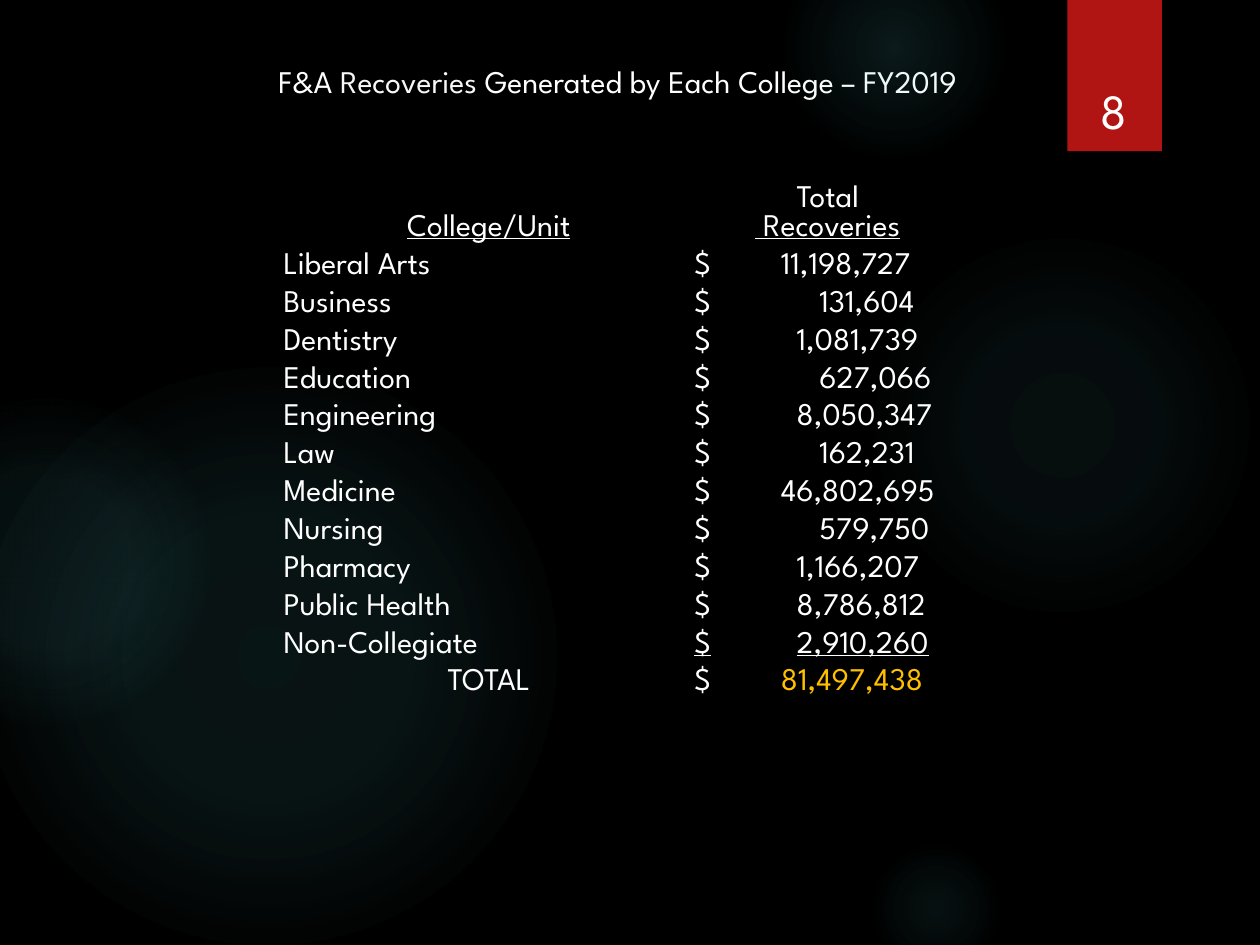
import pptx
import pptx.util
import pptx.oxml
import pptx.oxml.ns
import pptx.dml.color
from dataclasses import dataclass
from pptx.enum.shapes import MSO_SHAPE
from pptx.enum.text import MSO_ANCHOR, PP_ALIGN

Pt = pptx.util.Pt
NS = pptx.oxml.ns.nsdecls("a")


@dataclass(frozen=True)
class Theme:
    font: str = "League Spartan"
    back: str = "000000"
    text: str = "FFFFFF"
    soft: str = "F7F7F7"
    gold: str = "FFC000"
    red: str = "B01513"
    glow: str = "50B9C1"
    body: int = 18
    page: int = 28


T = Theme()

# left, top, diameter, then (position, opacity) stops in percent
GLOWS = [
    (496, 132, 222, [(0, 7), (36, 6), (69, 0)]),
    (448, -36, 126, [(0, 14), (36, 7), (73, 0)]),
    (496, 480, 78, [(0, 9), (36, 5), (66, 0)]),
    (-12, 210, 330, [(0, 11), (36, 10), (75, 0)]),
    (-66, 228, 186, [(0, 8), (36, 8), (72, 0)]),
]
ROWS = [
    ("Liberal Arts", "11,198,727"),
    ("Business", "131,604"),
    ("Dentistry", "1,081,739"),
    ("Education", "627,066"),
    ("Engineering", "8,050,347"),
    ("Law", "162,231"),
    ("Medicine", "46,802,695"),
    ("Nursing", "579,750"),
    ("Pharmacy", "1,166,207"),
    ("Public Health", "8,786,812"),
    ("Non-Collegiate", "2,910,260"),
    ("TOTAL", "81,497,438"),
]
# where an amount starts, by its number of characters
TABS = {10: 49.5, 9: 58.5, 7: 71.5}


def rgb(code):
    return pptx.dml.color.RGBColor.from_string(code)


def write(para, text, color=T.text, size=T.body, line=False):
    run = para.add_run()
    run.text = text
    run.font.name = T.font
    run.font.size = Pt(size)
    run.font.color.rgb = rgb(color)
    run.font.underline = line


def glow(slide, left, top, size, stops):
    disc = slide.shapes.add_shape(
        MSO_SHAPE.OVAL, Pt(left), Pt(top), Pt(size), Pt(size))
    disc.shadow.inherit = False
    disc.line.fill.background()
    marks = "".join(
        f'<a:gs pos="{pos * 1000}"><a:srgbClr val="{T.glow}">'
        f'<a:alpha val="{alpha * 1000}"/></a:srgbClr></a:gs>'
        for pos, alpha in stops)
    fill = pptx.oxml.parse_xml(
        f'<a:gradFill {NS} rotWithShape="1"><a:gsLst>{marks}</a:gsLst>'
        '<a:path path="circle"><a:fillToRect l="50000" t="50000" '
        'r="50000" b="50000"/></a:path></a:gradFill>')
    geom = disc._element.spPr.find(pptx.oxml.ns.qn("a:prstGeom"))
    geom.addnext(fill)


def badge(slide, left, top, width, height):
    # Red tab with the page number low inside it
    tab = slide.shapes.add_shape(
        MSO_SHAPE.RECTANGLE, Pt(left), Pt(top), Pt(width), Pt(height))
    tab.shadow.inherit = False
    tab.fill.solid()
    tab.fill.fore_color.rgb = rgb(T.red)
    tab.line.fill.background()
    box = slide.shapes.add_textbox(
        Pt(left + 1.5), Pt(top + 23), Pt(width - 4), Pt(height - 26))
    frame = box.text_frame
    frame.word_wrap = True
    frame.vertical_anchor = MSO_ANCHOR.BOTTOM
    para = frame.paragraphs[0]
    para.alignment = PP_ALIGN.CENTER
    write(para, "8", size=T.page)


def title(slide, left, top, width, height):
    head = slide.shapes.title
    head.left, head.top = Pt(left), Pt(top)
    head.width, head.height = Pt(width), Pt(height)
    frame = head.text_frame
    frame.vertical_anchor = MSO_ANCHOR.MIDDLE
    para = frame.paragraphs[0]
    para.alignment = PP_ALIGN.CENTER
    write(para, "F&A ")
    write(para, "Recoveries", T.soft)
    write(para, " Generated by Each College – FY2019")


def tab_stop(para, pos):
    props = para._p.get_or_add_pPr()
    props.append(pptx.oxml.parse_xml(
        f'<a:tabLst {NS}><a:tab pos="{Pt(pos)}" algn="l"/></a:tabLst>'))


def grid(slide, left, top, width, height):
    step = height / (len(ROWS) + 2)  # the header is two steps high
    frame = slide.shapes.add_table(
        len(ROWS) + 1, 2, Pt(left), Pt(top), Pt(width), Pt(height))
    table = frame.table
    table.first_row = table.horz_banding = False
    # "No style, no grid"
    style = table._tbl.tblPr.find(pptx.oxml.ns.qn("a:tableStyleId"))
    style.text = "{2D5ABB26-0587-4C30-8999-92F81FD0307C}"
    for col, share in zip(table.columns, (0.606, 0.394)):
        col.width = Pt(round(width * share, 2))
    for row in table.rows:
        row.height = Pt(step)
    table.rows[0].height = Pt(2 * step)
    for cell in table.iter_cells():
        cell.fill.background()
        cell.vertical_anchor = MSO_ANCHOR.BOTTOM
        cell.margin_left = cell.margin_right = 0
        cell.margin_top = cell.margin_bottom = 0

    # Header
    unit, total = (table.cell(0, col).text_frame for col in (0, 1))
    write(unit.paragraphs[0], "College/Unit", line=True)
    write(total.paragraphs[0], "Total")
    write(total.add_paragraph(), " Recoveries", line=True)
    for para in (*unit.paragraphs, *total.paragraphs):
        para.alignment = PP_ALIGN.CENTER

    # Colleges, an underlined last one, and the sum
    end = len(ROWS)
    for num, (name, sum_) in enumerate(ROWS, 1):
        label, cash = (
            table.cell(num, col).text_frame.paragraphs[0] for col in (0, 1))
        label.alignment = PP_ALIGN.CENTER if num == end else PP_ALIGN.LEFT
        write(label, name)
        tab_stop(cash, TABS[len(sum_)])
        rule = num == end - 1
        write(cash, "$\t", line=rule)
        write(cash, sum_, T.gold if num == end else T.text, line=rule)


def main():
    deck = pptx.Presentation()
    deck.slide_width, deck.slide_height = Pt(720), Pt(540)
    slide = deck.slides.add_slide(deck.slide_layouts[5])
    slide.background.fill.solid()
    slide.background.fill.fore_color.rgb = rgb(T.back)
    for spot in GLOWS:
        glow(slide, *spot)
    badge(slide, 610, 0, 54, 86.4)
    grid(slide, 162, 96, 387.4, 302.4)
    title(slide, 62, 32, 582, 29)
    deck.save("out.pptx")


if __name__ == "__main__":
    main()
